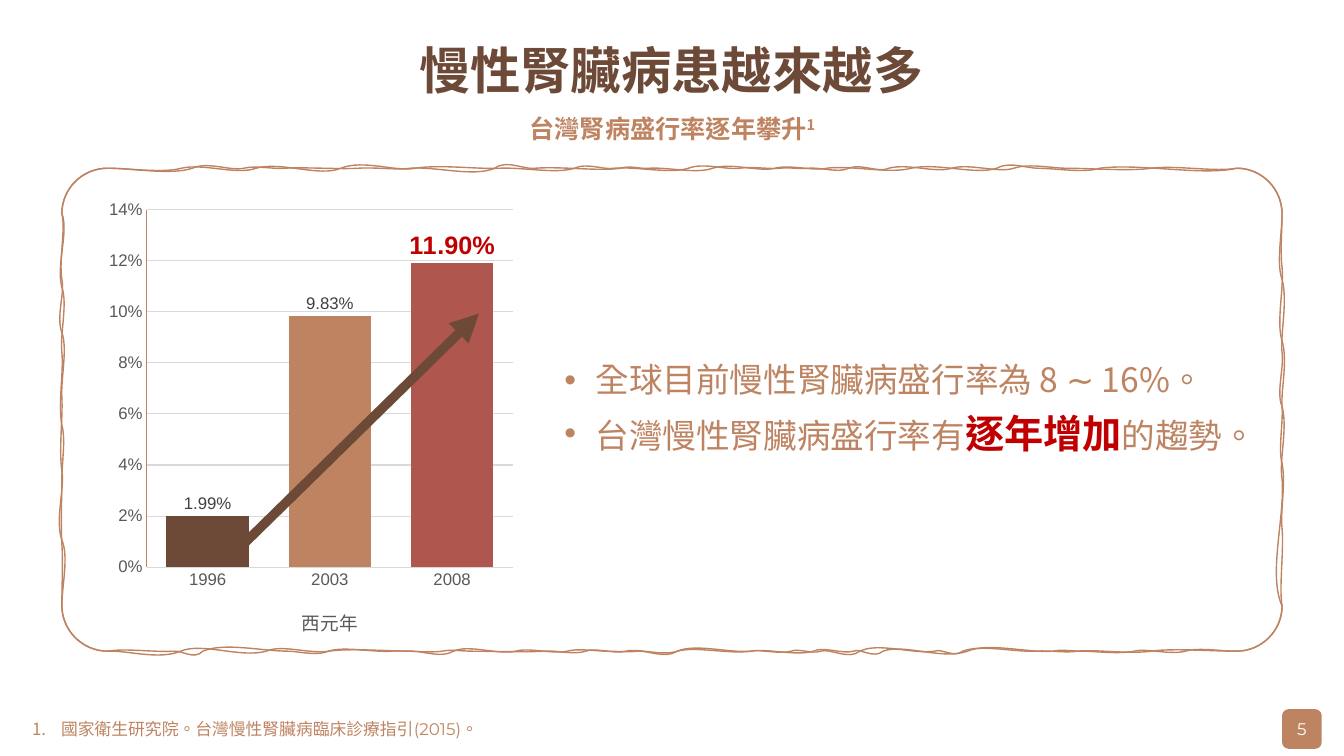
from lxml import etree
from pptx import Presentation
from pptx import util as u
from pptx.chart.data import CategoryChartData
from pptx.dml.color import RGBColor
from pptx.enum import chart as c, shapes, text
from pptx.oxml import parse_xml
from pptx.oxml.ns import nsdecls, qn

# Content: each paragraph is a list of (words, format) runs
TITLE = [[("慢性腎臟病患越來越多", "title")]]
SUBTITLE = [[("台灣腎病盛行率逐年攀升", "subtitle"), ("1", "superscript")]]
SOURCE = [[("國家衛生研究院。台灣慢性腎臟病臨床診療指引(2015)。", "source")]]
FINDINGS = [
    [("全球目前慢性腎臟病盛行率為 8 ∼ 16%。", "body")],
    [("台灣慢性腎臟病盛行率有", "body"), ("逐年增加", "emphasis"), ("的趨勢。", "body")],
]
PAGE_NUMBER = [[("5", "page")]]
PREVALENCE = {"1996": 0.0199, "2003": 0.0983, "2008": 0.119}
YEAR_AXIS = "西元年"

# Theme
CJK = "Noto Sans CJK TC"
THEME = {
    "brown": "6C4A37", "tan": "BE8462", "rust": "AF564F", "red": "C00000",
    "white": "FFFFFF", "gray": "595959", "dark": "404040", "grid": "D9D9D9",
    "title": dict(name=CJK, size=36, color="brown", bold=True),
    "subtitle": dict(name=CJK, size=18, color="tan", bold=True),
    "superscript": dict(name=CJK, size=18, color="tan", bold=True, baseline=30000),
    "source": dict(name="Montserrat", size=12, color="tan", bold=False),
    "body": dict(name=CJK, size=24, color="tan", bold=False),
    "emphasis": dict(name=CJK, size=28, color="red", bold=True),
    "page": dict(name="Montserrat", size=12, color="white", bold=False),
    "axis": dict(name="Arial", size=12, color="gray", bold=False),
    "axis title": dict(name="Arial", size=13.3, color="gray", bold=False),
    "label": dict(name="Arial", size=12, color="dark", bold=False),
    "top label": dict(name="Arial", size=18, color="red", bold=True),
}
BAR_COLORS = ["brown", "tan", "rust"]

# Hand-drawn frame in cm: (knot along the edge, inward wobble before it),
# clockwise for the top, right, bottom and left edges
LEFT, TOP, RIGHT, BOTTOM, RADIUS = 1.56, 4.24, 32.31, 16.41, 1.15
STROKES = [
    [
        [(4.57, .13), (6.45, .18), (8.59, .23), (10.46, .1), (12.6, .03), (14.48, .15),
         (15.47, .05), (17.35, .15), (18.64, .05), (19.66, .03), (20.37, .03), (21.39, .13),
         (22.4, .13), (23.98, .13), (25.55, .13), (26.85, 0), (29.01, .08), (31.17, .1)],
        [(7.04, .15), (8.89, .05), (10.24, .15), (12.07, .08), (15.27, .36)],
        [(29.87, .1), (28.58, .08), (27.28, 0), (26.54, .05), (24.38, .23), (22.25, .2),
         (21.51, .08), (20.5, .13), (18.92, .08), (17.07, .13), (15.77, .08), (14.76, .1),
         (13.74, .03), (11.89, 0), (11.15, .05), (9.86, .03), (8.28, .13), (7.26, 0),
         (5.11, .23), (4.39, .03), (2.72, .08)],
        [(13.61, .18), (11.86, .08), (10.03, .03), (8.38, .15), (7.04, .08), (5.38, .1)],
    ],
    [
        [(4.85, .18), (6.15, .08), (7.16, .03), (9.04, .03), (10.34, .05), (12.47, .23),
         (13.49, .05), (15.65, .08), (16.36, .03), (17.96, .15), (19.53, .1), (20.83, .08),
         (22.96, .15), (25.12, .18), (26.14, 0), (27.71, .13), (31.17, .2)],
        [(6.73, .05), (8.59, .15), (10.24, .03), (11.68, .1), (13.31, .05), (15.27, .08)],
        [(29.01, .08), (27.15, .05), (26.14, .03), (24.26, .18), (23.55, .08), (21.67, .23),
         (20.68, .08), (19.94, .08), (18.92, .05), (17.07, .2), (16.05, .03), (15.32, 0),
         (14.3, .08), (13, .1), (11.43, .18), (10.41, 0), (8.28, .08), (6.71, .18),
         (4.55, .23), (2.72, .03)],
        [(13.72, .03), (12.07, 0), (10.72, .1), (8.89, .05), (7.24, .15), (5.38, .18)],
    ],
]


def color(name):
    return RGBColor.from_string(THEME[name])


def style(font, name):
    for key, value in THEME[name].items():
        if key == "color":
            font.color.rgb = color(value)
        elif key == "baseline":
            font._element.set("baseline", str(value))
        else:
            setattr(font, key, u.Pt(value) if key == "size" else value)


def write(shape, paragraphs, align=text.PP_ALIGN.LEFT, anchor=text.MSO_ANCHOR.TOP,
          bullet="<a:buNone {}/>", indent=0, spacing=0.9, margins=(0.25, 0.13)):
    frame = shape.text_frame
    side, edge = (u.Cm(margin) for margin in margins)
    settings = dict(word_wrap=True, auto_size=text.MSO_AUTO_SIZE.NONE, vertical_anchor=anchor,
                    margin_left=side, margin_right=side, margin_top=edge, margin_bottom=edge)
    for key, value in settings.items():
        setattr(frame, key, value)
    for index, runs in enumerate(paragraphs):
        paragraph = frame.add_paragraph() if index else frame.paragraphs[0]
        properties = paragraph._p.get_or_add_pPr()
        properties.set("marL", str(u.Cm(indent)))
        properties.set("indent", str(-u.Cm(indent)))
        properties.append(parse_xml(bullet.format(nsdecls("a"))))
        for key, value in dict(alignment=align, line_spacing=spacing, space_after=u.Pt(0),
                               space_before=u.Pt(10 if index else 0)).items():
            setattr(paragraph, key, value)
        for words, name in runs:
            run = paragraph.add_run()
            run.text = words
            style(run.font, name)
            run.font._element.set("lang", "zh-TW")
            etree.SubElement(run.font._element, qn("a:ea")).set("typeface", CJK)


def place(shape, left, top, width, height):
    for key, value in dict(left=left, top=top, width=width, height=height).items():
        setattr(shape, key, u.Cm(value))


def outline(stroke):
    """Yield three points a curve: two controls and the end."""
    edges = [(TOP, LEFT + RADIUS, 1), (RIGHT, TOP + RADIUS, -1),
             (BOTTOM, RIGHT - RADIUS, -1), (LEFT, BOTTOM - RADIUS, 1)]
    for index, (across, start, inward) in enumerate(edges):
        def point(along, depth):
            pair = (depth, along) if index % 2 else (along, depth)
            return tuple(u.Cm(value) for value in pair)
        bend = 0
        for knot, wobble in stroke[index]:
            step = knot - start
            yield point(start + 0.3 * step, across - inward * bend)
            yield point(start + 0.75 * step, across + inward * wobble)
            yield point(knot, across)
            start, bend = knot, wobble
        # Rounded corner to the next edge
        beyond, turn, _ = edges[(index + 1) % 4]
        yield point(start + 0.55 * (beyond - start), across)
        yield point(beyond, turn + 0.55 * (across - turn))
        yield point(beyond, turn)


def manual_layout(**values):
    inner = "".join(f'<c:{key} val="{value}"/>' for key, value in values.items())
    return parse_xml(f'<c:layout {nsdecls("c")}><c:manualLayout>{inner}</c:manualLayout></c:layout>')


def set_layout(parent, position, layout):
    for old in parent.findall(qn("c:layout")):
        parent.remove(old)
    parent.insert(position, layout)


presentation = Presentation()
presentation.slide_width, presentation.slide_height = u.Cm(33.87), u.Cm(19.05)
slide = presentation.slides.add_slide(presentation.slide_layouts[4])
title, subtitle, findings, source, spare = slide.placeholders
spare._element.getparent().remove(spare._element)

# Frame, behind everything
origin = (u.Cm(LEFT + RADIUS), u.Cm(TOP))
builder = slide.shapes.build_freeform(*origin)
for number, stroke in enumerate(STROKES):
    if number:
        builder.move_to(*origin)
    builder.add_line_segments(list(outline(stroke)), close=False)
frame = builder.convert_to_shape()
lines = list(frame._element.iter(qn("a:lnTo")))
for first, second, end in zip(lines[::3], lines[1::3], lines[2::3]):
    bezier = etree.Element(qn("a:cubicBezTo"))
    first.addprevious(bezier)
    for line in (first, second, end):
        bezier.append(line[0])
        line.getparent().remove(line)
frame.shadow.inherit = False
frame.fill.solid()
frame.fill.fore_color.rgb = color("white")
frame.line.color.rgb = color("tan")
frame.line.width = u.Pt(1)
slide.shapes._spTree.insert(2, frame._element)

# Headings, findings and source
BULLET_COLOR = '<a:buClr {}><a:srgbClr val="' + THEME["tan"] + '"/></a:buClr>'
place(title, 1.24, 1.02, 31.37, 1.78)
write(title, TITLE, text.PP_ALIGN.CENTER)
place(subtitle, 1.26, 2.81, 31.37, 1.04)
write(subtitle, SUBTITLE, text.PP_ALIGN.CENTER)
place(findings, 13.97, 9.04, 17.75, 2.62)
write(findings, FINDINGS, bullet='<a:buChar {} char="•"/>', indent=0.79)
place(source, 0.56, 17.88, 21.13, 1.02)
write(source, SOURCE, anchor=text.MSO_ANCHOR.MIDDLE,
      bullet='<a:buAutoNum {} type="arabicPeriod"/>', indent=0.73)
for shape in (findings, source):
    for paragraph in shape.text_frame.paragraphs:
        mark = paragraph._p.pPr[-1]
        mark.addprevious(parse_xml(BULLET_COLOR.format(nsdecls("a"))))

# Page number
badge = slide.shapes.add_shape(shapes.MSO_SHAPE.ROUNDED_RECTANGLE,
                               u.Cm(32.31), u.Cm(17.87), u.Cm(1), u.Cm(1))
badge.shadow.inherit = False
badge.fill.solid()
badge.fill.fore_color.rgb = color("tan")
badge.line.fill.background()
write(badge, PAGE_NUMBER, text.PP_ALIGN.CENTER, text.MSO_ANCHOR.MIDDLE, spacing=1, margins=(0, 0))

# Prevalence chart
data = CategoryChartData(number_format="0.00%")
data.categories = list(PREVALENCE)
data.add_series(" ", list(PREVALENCE.values()))
chart = slide.shapes.add_chart(c.XL_CHART_TYPE.COLUMN_CLUSTERED, u.Cm(2.15), u.Cm(4.59),
                               u.Cm(11.2), u.Cm(11.66), data).chart
chart.has_title = chart.has_legend = False
style(chart.font, "axis")
set_layout(chart._chartSpace.chart.plotArea, 0, manual_layout(
    layoutTarget="inner", xMode="edge", yMode="edge", x=0.138, y=0.06, w=0.825, h=0.772))

years, rates = chart.category_axis, chart.value_axis
for axis, line, width in ((years, "grid", 0.75), (rates, "tan", 0.5)):
    axis.major_tick_mark = axis.minor_tick_mark = c.XL_TICK_MARK.NONE
    style(axis.tick_labels.font, "axis")
    axis.format.line.color.rgb = color(line)
    axis.format.line.width = u.Pt(width)
rates.minimum_scale, rates.maximum_scale, rates.major_unit = 0, 0.14, 0.02
rates.tick_labels.number_format, rates.tick_labels.number_format_is_linked = "0%", False
rates.major_gridlines.format.line.color.rgb = color("grid")
rates.major_gridlines.format.line.width = u.Pt(0.75)
years.axis_title.text_frame.text = YEAR_AXIS
style(years.axis_title.text_frame.paragraphs[0].runs[0].font, "axis title")
set_layout(years.axis_title._element, 1, manual_layout(xMode="edge", yMode="edge", x=0.48, y=0.91))

plot = chart.plots[0]
plot.gap_width, plot.overlap, plot.vary_by_categories = 48, -33, False
series = plot.series[0]
for index, name in enumerate(BAR_COLORS):
    fill = series.points[index].format.fill
    fill.solid()
    fill.fore_color.rgb = color(name)
labels = series.data_labels
labels.show_value, labels.position = True, c.XL_LABEL_POSITION.OUTSIDE_END
labels.number_format, labels.number_format_is_linked = "0.00%", False
style(labels.font, "label")
top_label = series.points[2].data_label
style(top_label.font, "top label")
top_label.position = c.XL_LABEL_POSITION.OUTSIDE_END

# Rising arrow
arrow = slide.shapes.add_connector(shapes.MSO_CONNECTOR.STRAIGHT,
                                   u.Cm(5.74), u.Cm(14.1), u.Cm(12.07), u.Cm(7.9))
arrow.line.color.rgb = color("brown")
arrow.line.width = u.Pt(6.75)
etree.SubElement(arrow.line._get_or_add_ln(), qn("a:tailEnd")).set("type", "triangle")
etree.SubElement(arrow._element.spPr, qn("a:effectLst"))

presentation.save("out.pptx")
